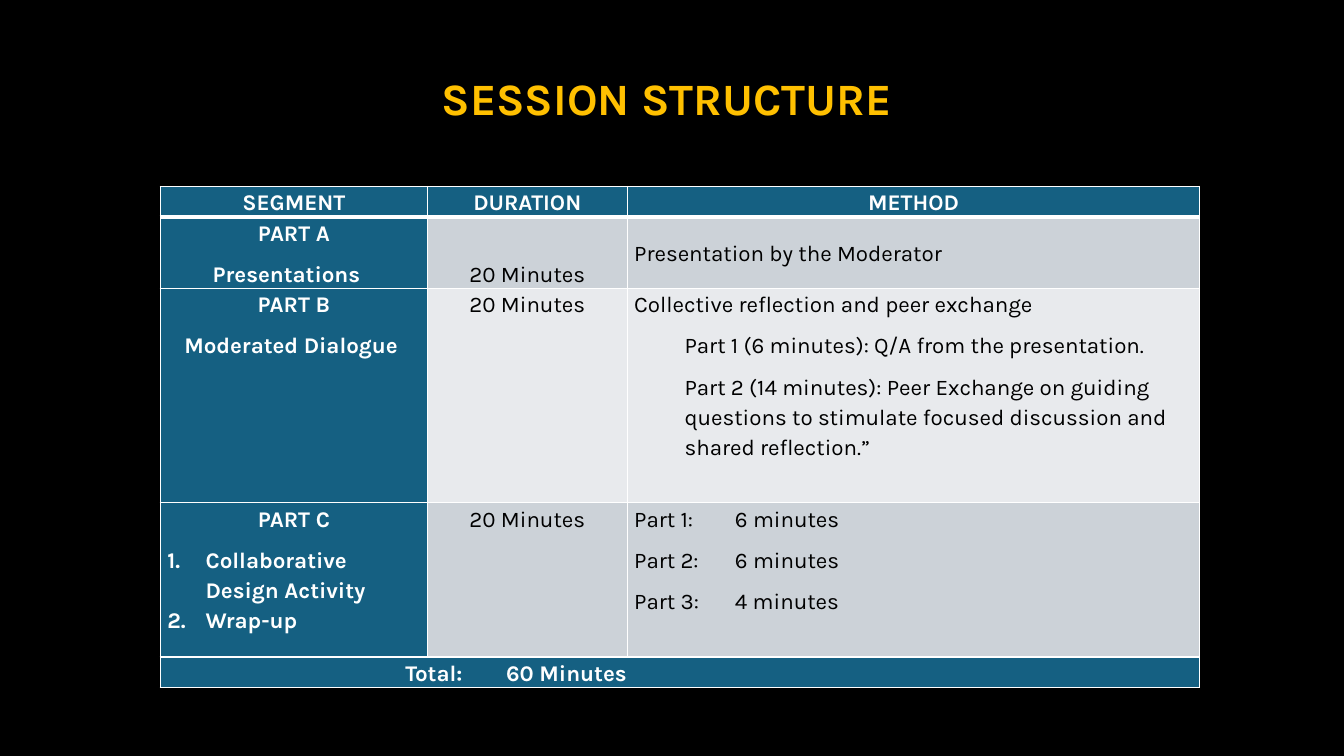
"""Build the session structure slide with its timetable."""
from dataclasses import dataclass

import pptx
import pptx.dml.color
import pptx.enum.text
import pptx.oxml.ns
import pptx.util
from lxml import etree

Inches = pptx.util.Inches
Pt = pptx.util.Pt
Color = pptx.dml.color.RGBColor.from_string
Align = pptx.enum.text.PP_ALIGN
Anchor = pptx.enum.text.MSO_ANCHOR


@dataclass(frozen=True)
class Theme:
    """Hold the colours, font and type sizes."""
    font: str = "Karla"
    back: str = "000000"
    title: str = "FFC000"
    light: str = "FFFFFF"
    dark: str = "000000"
    accent: str = "156082"
    band: str = "CCD2D8"
    pale: str = "E8EAED"
    title_size: int = 32
    table_size: int = 16


THEME = Theme()
COLUMN_WIDTHS = (2.65, 1.98, 5.68)
ROW_HEIGHTS = (0.3, 0.7, 2.13, 1.53, 0.3)
CENTER = {"align": Align.CENTER}
INDENT = {"indent": 0.5}
NUMBERED = {"indent": 0.38, "hanging": 0.38, "numbered": True}
HEADINGS = ("SEGMENT", "DURATION", "METHOD")
PARTS = (
    (THEME.band,
     [("PART A", CENTER), ("Presentations", {"indent": 0.45})],
     [("20 Minutes", CENTER)],
     [("Presentation by the Moderator", {})]),
    (THEME.pale,
     [("PART B", CENTER), ("Moderated Dialogue ", CENTER)],
     [("20 Minutes", CENTER)],
     [("Collective reflection and peer exchange", {}),
      ("Part 1 (6 minutes): Q/A from the presentation.", INDENT),
      ("Part 2 (14 minutes): Peer Exchange on guiding questions to stimulate "
       "focused discussion and shared reflection.”", INDENT)]),
    (THEME.band,
     [("PART C", CENTER),
      ("Collaborative Design Activity", {**NUMBERED, "after": 0}),
      ("Wrap-up", NUMBERED)],
     [("20 Minutes", CENTER)],
     [("Part 1:\t6 minutes", {"tab": 1}),
      ("Part 2:\t6 minutes", {"tab": 1}),
      ("Part 3:\t4 minutes", {"tab": 1.11})]),
)
TOTAL = [("Total:\t60 Minutes", {"indent": 2.36, "tab": 3.15})]


def apply_format(target, values):
    """Set each named attribute on the target."""
    for name, value in values.items():
        setattr(target, name, value)


def add_element(parent, tag, **attributes):
    """Append a drawing element with its attributes."""
    element = etree.SubElement(parent, pptx.oxml.ns.qn(tag))
    for name, value in attributes.items():
        element.set(name, str(value))
    return element


def add_span(para, text, size, color, bold):
    """Write one run of formatted text."""
    span = para.add_run()
    span.text = text
    apply_format(span.font, {"name": THEME.font, "size": Pt(size), "bold": bold})
    span.font.color.rgb = Color(color)


def format_para(para, align=Align.LEFT, indent=0, hanging=0, numbered=False,
                tab=None, after=8):
    """Set indents, numbering, tab stop and spacing of a paragraph."""
    properties = para._p.get_or_add_pPr()
    properties.set("marL", str(Inches(indent)))
    properties.set("indent", str(-Inches(hanging)))
    if numbered:
        add_element(properties, "a:buFont", typeface="+mj-lt")
        add_element(properties, "a:buAutoNum", type="arabicPeriod")
    if tab:
        stops = add_element(properties, "a:tabLst")
        add_element(stops, "a:tab", pos=Inches(tab), algn="l")
    apply_format(para, {"alignment": align, "line_spacing": 1.15,
                        "space_after": Pt(after)})


def add_borders(cell, top=1, bottom=1):
    """Draw the white lines around a cell."""
    properties = cell._tc.get_or_add_tcPr()
    for side, width in {"L": 1, "R": 1, "T": top, "B": bottom}.items():
        line = add_element(properties, f"a:ln{side}", w=Pt(width))
        add_element(add_element(line, "a:solidFill"), "a:srgbClr", val=THEME.light)


def fill_cell(cell, lines, fill, anchor=Anchor.TOP, **borders):
    """Give a cell its borders, fill and paragraphs."""
    add_borders(cell, **borders)
    cell.fill.solid()
    cell.fill.fore_color.rgb = Color(fill)
    apply_format(cell, {"margin_left": Inches(0.07), "margin_right": Inches(0.07),
                        "margin_top": 0, "margin_bottom": 0,
                        "vertical_anchor": anchor})
    strong = fill == THEME.accent
    color = THEME.light if strong else THEME.dark
    for index, (text, layout) in enumerate(lines):
        frame = cell.text_frame
        para = frame.add_paragraph() if index else frame.paragraphs[0]
        format_para(para, **layout)
        add_span(para, text, THEME.table_size, color, strong)


def add_title(page, text):
    """Place the slide title."""
    title = page.shapes.title
    apply_format(title, {"left": Inches(0.92), "top": Inches(0.4),
                         "width": Inches(11.5), "height": Inches(1.2)})
    apply_format(title.text_frame, {"vertical_anchor": Anchor.MIDDLE,
                                    "word_wrap": True,
                                    "auto_size": pptx.enum.text.MSO_AUTO_SIZE.NONE})
    para = title.text_frame.paragraphs[0]
    apply_format(para, {"alignment": Align.CENTER, "line_spacing": 0.9})
    add_span(para, text, THEME.title_size, THEME.title, True)


def add_timetable(page):
    """Add the table of segments, durations and methods."""
    table = page.shapes.add_table(
        len(ROW_HEIGHTS), len(COLUMN_WIDTHS), Inches(1.59), Inches(1.85),
        Inches(sum(COLUMN_WIDTHS)), Inches(sum(ROW_HEIGHTS))).table
    apply_format(table, {"first_row": False, "horz_banding": False})
    for column, width in zip(table.columns, COLUMN_WIDTHS):
        column.width = Inches(width)
    for row, height in zip(table.rows, ROW_HEIGHTS):
        row.height = Inches(height)
    for column, heading in enumerate(HEADINGS):
        fill_cell(table.cell(0, column), [(heading, CENTER)], THEME.accent, bottom=3)
    first_anchors = (Anchor.MIDDLE, Anchor.BOTTOM, Anchor.MIDDLE)
    for row, (band, *contents) in enumerate(PARTS, start=1):
        for column, lines in enumerate(contents):
            fill_cell(table.cell(row, column), lines,
                      band if column else THEME.accent,
                      first_anchors[column] if row == 1 else Anchor.TOP,
                      top=3 if row == 1 else 1)
    last = len(ROW_HEIGHTS) - 1
    table.cell(last, 0).merge(table.cell(last, len(COLUMN_WIDTHS) - 1))
    for column in range(len(COLUMN_WIDTHS)):
        fill_cell(table.cell(last, column), [] if column else TOTAL, THEME.accent)


def main():
    """Build and save the deck."""
    deck = pptx.Presentation()
    apply_format(deck, {"slide_width": Inches(13.33), "slide_height": Inches(7.5)})
    page = deck.slides.add_slide(deck.slide_layouts[5])
    page.background.fill.solid()
    page.background.fill.fore_color.rgb = Color(THEME.back)
    add_title(page, "SESSION STRUCTURE ")
    add_timetable(page)
    deck.save("out.pptx")


if __name__ == "__main__":
    main()
